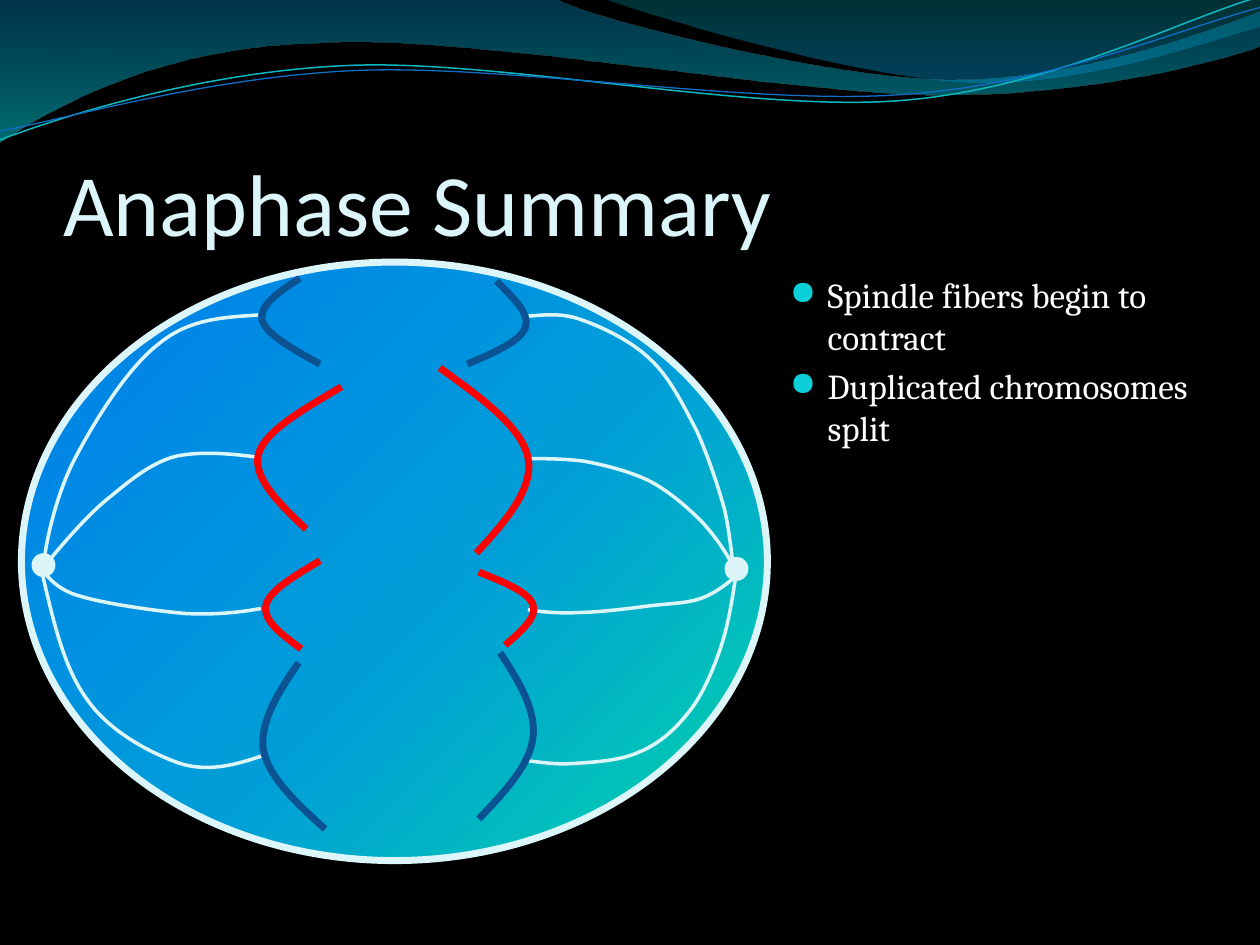
"""Build the Anaphase Summary slide: a dividing cell with two takeaways."""
from lxml import etree
from pptx import Presentation, util as u
from pptx.dml.color import RGBColor
from pptx.enum import shapes, text
from pptx.oxml import parse_xml
from pptx.oxml.ns import nsdecls, qn

UNIT = 9144
COLORS = {"black": "000000", "white": "FFFFFF", "ice": "DBF5F9", "red": "FF0000",
          "navy": "0B5292", "teal": "0AB8BF", "blue": "0F6FC6", "bullet": "0BD0D9"}
DOWN = '<a:lin ang="5400000" scaled="0"/>'
CORNER = '<a:path path="circle"><a:fillToRect l="100000" t="100000"/></a:path>'
CELL_STOPS = [(0, "03D4A8", 100), (45, "009DD9", 100), (85, "0087E6", 100), (100, "005CBF", 100)]

BANDS = [
    ([(0, 0), (440, -1), (476, 17, 664, 63, 758, 63), (853, 63, 958, 26, 1000, 9),
      (1001, 36), (983, 44, 870, 76, 746, 75), (622, 75, 382, 28, 257, 34),
      (129, 36, 46, 83, -1, 113), (0, 0)],
     [(0, "0074A1", 45), (100, "00C6CF", 55)]),
    ([(479, -1), (509, 11, 682, 62, 769, 65), (856, 69, 961, 32, 1000, 21),
      (1000, 0), (479, -1)],
     [(0, "00A1A9", 30), (80, "008BBF", 45)]),
]
WAVES = [
    ([(0, 111), (48, 93, 158, 57, 277, 52), (395, 47, 593, 89, 713, 80),
      (833, 71, 938, 15, 998, -2)], "teal", 0.85),
    ([(0, 104), (47, 96, 164, 61, 283, 56), (403, 51, 597, 84, 717, 75),
      (836, 67, 941, 21, 1000, 6)], "blue", 0.75),
]
FIBERS = [
    [(205, 250), (177, 252, 150, 253, 126, 273), (101, 292, 74, 336, 59, 365),
     (44, 394, 36, 433, 35, 446)],
    [(206, 363), (183, 360, 160, 358, 140, 362), (121, 367, 106, 379, 89, 393),
     (71, 407, 54, 427, 37, 447)],
    [(208, 600), (187, 607, 166, 613, 143, 606), (120, 598, 87, 581, 69, 555),
     (50, 529, 42, 491, 33, 453)],
    [(207, 483), (190, 486, 172, 488, 148, 487), (124, 485, 82, 479, 63, 473),
     (44, 468, 35, 454, 35, 454)],
    [(418, 251), (432, 250, 446, 248, 462, 254), (479, 260, 502, 271, 517, 286),
     (532, 300, 543, 323, 553, 342), (562, 362, 570, 386, 575, 404),
     (579, 422, 581, 442, 582, 450)],
    [(417, 364), (432, 364, 447, 364, 463, 366), (480, 369, 499, 374, 514, 381),
     (530, 389, 545, 402, 557, 414), (568, 426, 576, 438, 583, 451)],
    [(419, 484), (433, 486, 446, 487, 462, 486), (478, 486, 514, 481, 514, 481),
     (530, 479, 545, 479, 556, 475), (568, 471, 580, 461, 583, 458)],
    [(420, 604), (430, 605, 441, 607, 455, 606), (470, 605, 492, 604, 507, 597),
     (522, 591, 535, 580, 546, 566), (557, 553, 566, 532, 572, 514),
     (578, 496, 581, 477, 584, 457)],
]
CHROMOSOMES = [
    ("red", [(349, 292), (381, 315, 414, 339, 419, 363), (424, 388, 401, 414, 378, 439)]),
    ("red", [(271, 307), (241, 325, 210, 342, 205, 361), (201, 380, 222, 400, 243, 420)]),
    ("navy", [(258, 658), (236, 638, 213, 617, 209, 595), (206, 573, 221, 549, 237, 526)]),
    ("navy", [(380, 650), (400, 629, 420, 608, 423, 586), (426, 564, 412, 541, 397, 518)]),
    ("red", [(380, 454), (400, 462, 420, 470, 423, 480), (427, 489, 414, 501, 401, 512)]),
    ("red", [(254, 445), (234, 457, 213, 469, 211, 481), (209, 493, 224, 504, 239, 515)]),
    ("navy", [(254, 289), (232, 277, 211, 265, 208, 254), (206, 242, 222, 231, 238, 221)]),
    ("navy", [(371, 289), (392, 280, 413, 271, 417, 260), (421, 249, 407, 236, 394, 223)]),
]


def rgb(name):
    """Return a named colour."""
    return RGBColor.from_string(COLORS[name])


def set_line(shape, color, width):
    """Give a shape a solid outline."""
    shape.line.color.rgb = rgb(color)
    shape.line.width = u.Pt(width)


def set_gradient(shape, stops, direction):
    """Fill a shape with stops of position, colour and opacity in percent."""
    marks = "".join(
        f'<a:gs pos="{position * 1000}"><a:srgbClr val="{color}">'
        f'<a:alpha val="{opacity * 1000}"/></a:srgbClr></a:gs>'
        for position, color, opacity in stops)
    shape.fill.background()
    blank = shape.element.spPr.find(qn("a:noFill"))
    blank.getparent().replace(blank, parse_xml(
        f'<a:gradFill {nsdecls("a")} rotWithShape="1"><a:gsLst>{marks}</a:gsLst>{direction}</a:gradFill>'))


def add_curve(page, steps):
    """Draw a start point followed by lines (2 numbers) and Béziers (6 numbers)."""
    start, *segments = steps
    builder = page.shapes.build_freeform(*start, scale=UNIT)
    for step in segments:
        builder.add_line_segments(list(zip(step[::2], step[1::2])), close=False)
    shape = builder.convert_to_shape()
    shape.shadow.inherit = False
    shape.fill.background()
    lines = iter(list(shape.element.iter(qn("a:lnTo"))))
    for step in segments:
        first, *others = [next(lines) for _ in step[::2]]
        if others:
            first.tag = qn("a:cubicBezTo")
        for other in others:
            first.append(other[0])
            other.getparent().remove(other)
    return shape


def add_stroke(page, steps, color, width):
    """Draw an open curve."""
    set_line(add_curve(page, steps), color, width)


def add_band(page, steps, stops):
    """Draw a filled ribbon without an outline."""
    band = add_curve(page, steps)
    band.line.fill.background()
    set_gradient(band, stops, DOWN)


def add_oval(page, *bounds):
    """Add an ellipse with bounds in hundredths of an inch."""
    oval = page.shapes.add_shape(shapes.MSO_SHAPE.OVAL, *(value * UNIT for value in bounds))
    oval.shadow.inherit = False
    return oval


def add_pole(page, left, top):
    """Add a spindle pole."""
    pole = add_oval(page, left, top, 19, 19)
    pole.fill.solid()
    pole.fill.fore_color.rgb = rgb("ice")
    pole.line.fill.background()


def style_runs(para, font, size, color):
    """Format every run of a paragraph."""
    for span in para.runs:
        span.font.name = font
        span.font.size = u.Pt(size)
        span.font.color.rgb = rgb(color)


def set_title(page, words):
    """Place and format the title."""
    title = page.shapes.title
    title.element.getparent().append(title.element)
    title.left, title.top, title.width, title.height = map(u.Inches, (0.5, 0.77, 9, 1.25))
    frame = title.text_frame
    frame.text = words
    frame.auto_size = text.MSO_AUTO_SIZE.NONE
    frame.vertical_anchor = text.MSO_ANCHOR.BOTTOM
    frame.margin_left = frame.margin_right = frame.margin_bottom = 0
    frame.margin_top = u.Inches(0.05)
    para = frame.paragraphs[0]
    para.alignment = text.PP_ALIGN.LEFT
    style_runs(para, "Calibri", 50, "ice")


def add_bullets(page, items):
    """Add the bulleted takeaways."""
    box = page.shapes.add_textbox(*map(u.Inches, (6.17, 2.12, 3.67, 4.8)))
    frame = box.text_frame
    frame.word_wrap = True
    frame.text = "\n".join(items)
    for para in frame.paragraphs:
        para.space_before = u.Pt(4)
        style_runs(para, "Cambria", 20, "white")
        settings = para._p.get_or_add_pPr()
        settings.set("marL", str(u.Inches(0.3)))
        settings.set("indent", str(-u.Inches(0.3)))
        color = etree.SubElement(settings, qn("a:buClr"))
        etree.SubElement(color, qn("a:srgbClr"), val=COLORS["bullet"])
        etree.SubElement(settings, qn("a:buSzPct"), val="95000")
        etree.SubElement(settings, qn("a:buChar"), char="●")


def main():
    """Assemble and save the deck."""
    deck = Presentation()
    deck.slide_width, deck.slide_height = u.Inches(10), u.Inches(7.5)
    page = deck.slides.add_slide(deck.slide_layouts[5])
    page.background.fill.solid()
    page.background.fill.fore_color.rgb = rgb("black")
    for steps, stops in BANDS:
        add_band(page, steps, stops)
    for steps, color, width in WAVES:
        add_stroke(page, steps, color, width)
    set_title(page, "Anaphase Summary")
    cell = add_oval(page, 17, 208, 592, 475)
    set_gradient(cell, CELL_STOPS, CORNER)
    set_line(cell, "ice", 4)
    add_pole(page, 25, 439)
    add_pole(page, 575, 442)
    for steps in FIBERS:
        add_stroke(page, steps, "ice", 2)
    for color, steps in CHROMOSOMES:
        add_stroke(page, steps, color, 4)
    add_bullets(page, ["Spindle fibers begin to contract", "Duplicated chromosomes split"])
    deck.save("out.pptx")


if __name__ == "__main__":
    main()
